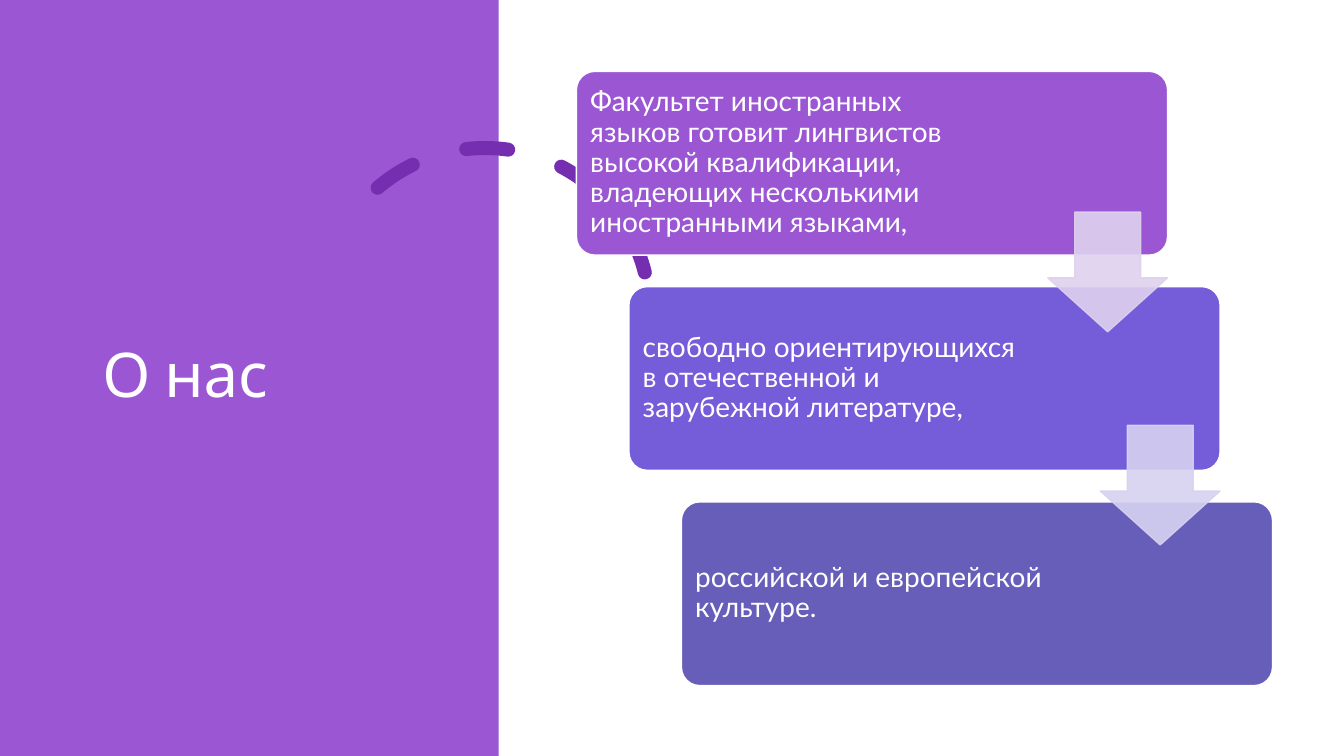
from dataclasses import dataclass

from lxml.etree import SubElement
from pptx import Presentation
from pptx.dml.color import RGBColor
from pptx.enum.dml import MSO_LINE
from pptx.enum.shapes import MSO_SHAPE
from pptx.enum.text import MSO_ANCHOR, PP_ALIGN
from pptx.oxml.ns import qn
from pptx.shapes.autoshape import Shape
from pptx.slide import Slide
from pptx.util import Emu, Pt

EMU_PER_PX = 9525
SLIDE_WIDTH, SLIDE_HEIGHT = 1280, 720

WHITE = RGBColor(0xFF, 0xFF, 0xFF)
PURPLE = RGBColor(0x9B, 0x57, 0xD3)
DEEP_PURPLE = RGBColor(0x76, 0x2E, 0xB1)
VIOLET = RGBColor(0x75, 0x5D, 0xD9)
INDIGO = RGBColor(0x66, 0x5E, 0xB8)
PALE_PURPLE = RGBColor(0xDE, 0xD1, 0xEF)
PALE_VIOLET = RGBColor(0xD6, 0xD2, 0xF1)

CARD_WIDTH, CARD_HEIGHT = 563, 175
CARD_LEFT, CARD_TOP = 549, 68
CARD_STEP_X, CARD_STEP_Y = 50, 205
CARD_INSET = 8
ARROW_SIZE = 114
ARROW_LEFT, ARROW_TOP = 998, 202
ARROW_STEP_X, ARROW_STEP_Y = 50, 203
ARROW_OPACITY = 90000


@dataclass(frozen=True)
class Box:
    """A rectangle in px."""

    left: int
    top: int
    width: int
    height: int

    def emu(self) -> tuple[Emu, Emu, Emu, Emu]:
        """Return the rectangle in EMU."""
        return px(self.left), px(self.top), px(self.width), px(self.height)


@dataclass(frozen=True)
class Card:
    """One step of the cascade."""

    text: str
    fill: RGBColor
    right_inset: int


CARDS = (
    Card(
        "Факультет иностранных языков готовит лингвистов высокой квалификации, "
        "владеющих несколькими иностранными языками,",
        PURPLE,
        187,
    ),
    Card("свободно ориентирующихся в отечественной и зарубежной литературе,", VIOLET, 172),
    Card("российской и европейской культуре.", INDIGO, 172),
)
ARROW_COLOURS = (PALE_PURPLE, PALE_VIOLET)


def px(length: int) -> Emu:
    """Turn px into EMU."""
    return Emu(length * EMU_PER_PX)


def write(shape: Shape, text: str, font_name: str, size: int) -> None:
    """Set white, left-aligned, vertically centred text."""
    frame = shape.text_frame
    frame.word_wrap = True
    frame.vertical_anchor = MSO_ANCHOR.MIDDLE
    paragraph = frame.paragraphs[0]
    paragraph.text = text
    paragraph.alignment = PP_ALIGN.LEFT
    paragraph.line_spacing = 0.9
    paragraph.font.name = font_name
    paragraph.font.size = Pt(size)
    paragraph.font.color.rgb = WHITE


def add_filled(
    slide: Slide, preset: MSO_SHAPE, box: Box, fill: RGBColor, outline: RGBColor | None = None
) -> Shape:
    """Add a flat preset shape with an optional thin outline."""
    shape = slide.shapes.add_shape(preset, *box.emu())
    shape.shadow.inherit = False
    shape.fill.solid()
    shape.fill.fore_color.rgb = fill
    if outline is None:
        shape.line.fill.background()
    else:
        shape.line.color.rgb = outline
        shape.line.width = Pt(1)
    return shape


def add_dashed_arc(slide: Slide) -> None:
    """Add the round-capped dashed arc."""
    arc = slide.shapes.add_shape(MSO_SHAPE.ARC, *Box(305, 141, 314, 314).emu())
    arc.shadow.inherit = False
    arc.adjustments[0] = 146.13
    arc.adjustments[1] = 0
    arc.rotation = 345.8
    arc.fill.background()
    arc.line.color.rgb = DEEP_PURPLE
    arc.line.width = Pt(10)
    arc.line.dash_style = MSO_LINE.DASH
    arc._element.spPr.find(qn("a:ln")).set("cap", "rnd")


def add_card(slide: Slide, index: int, card: Card) -> None:
    """Add one rounded card with its text."""
    box = Box(
        CARD_LEFT + index * CARD_STEP_X,
        CARD_TOP + index * CARD_STEP_Y,
        CARD_WIDTH,
        CARD_HEIGHT,
    )
    step = add_filled(slide, MSO_SHAPE.ROUNDED_RECTANGLE, box, card.fill, WHITE)
    step.adjustments[0] = 0.1
    frame = step.text_frame
    frame.margin_left = frame.margin_top = frame.margin_bottom = px(CARD_INSET)
    frame.margin_right = px(card.right_inset)
    write(step, card.text, "Lato", 20)


def add_arrow(slide: Slide, index: int, colour: RGBColor) -> None:
    """Add a translucent arrow to the next card."""
    box = Box(
        ARROW_LEFT + index * ARROW_STEP_X,
        ARROW_TOP + index * ARROW_STEP_Y,
        ARROW_SIZE,
        ARROW_SIZE,
    )
    arrow = add_filled(slide, MSO_SHAPE.DOWN_ARROW, box, colour, colour)
    arrow.adjustments[0] = 0.55
    arrow.adjustments[1] = 0.45
    for tint in list(arrow._element.spPr.iter(qn("a:srgbClr"))):
        SubElement(tint, qn("a:alpha")).set("val", str(ARROW_OPACITY))


def main() -> None:
    """Build and save the slide."""
    presentation = Presentation()
    presentation.slide_width = px(SLIDE_WIDTH)
    presentation.slide_height = px(SLIDE_HEIGHT)
    slide = presentation.slides.add_slide(presentation.slide_layouts[6])

    add_filled(slide, MSO_SHAPE.RECTANGLE, Box(0, 0, 475, SLIDE_HEIGHT), PURPLE)
    add_dashed_arc(slide)
    title = slide.shapes.add_textbox(*Box(88, 67, 310, 585).emu())
    write(title, "О нас", "Cabin", 44)
    for index, card in enumerate(CARDS):
        add_card(slide, index, card)
    for index, colour in enumerate(ARROW_COLOURS):
        add_arrow(slide, index, colour)

    presentation.save("out.pptx")


if __name__ == "__main__":
    main()
